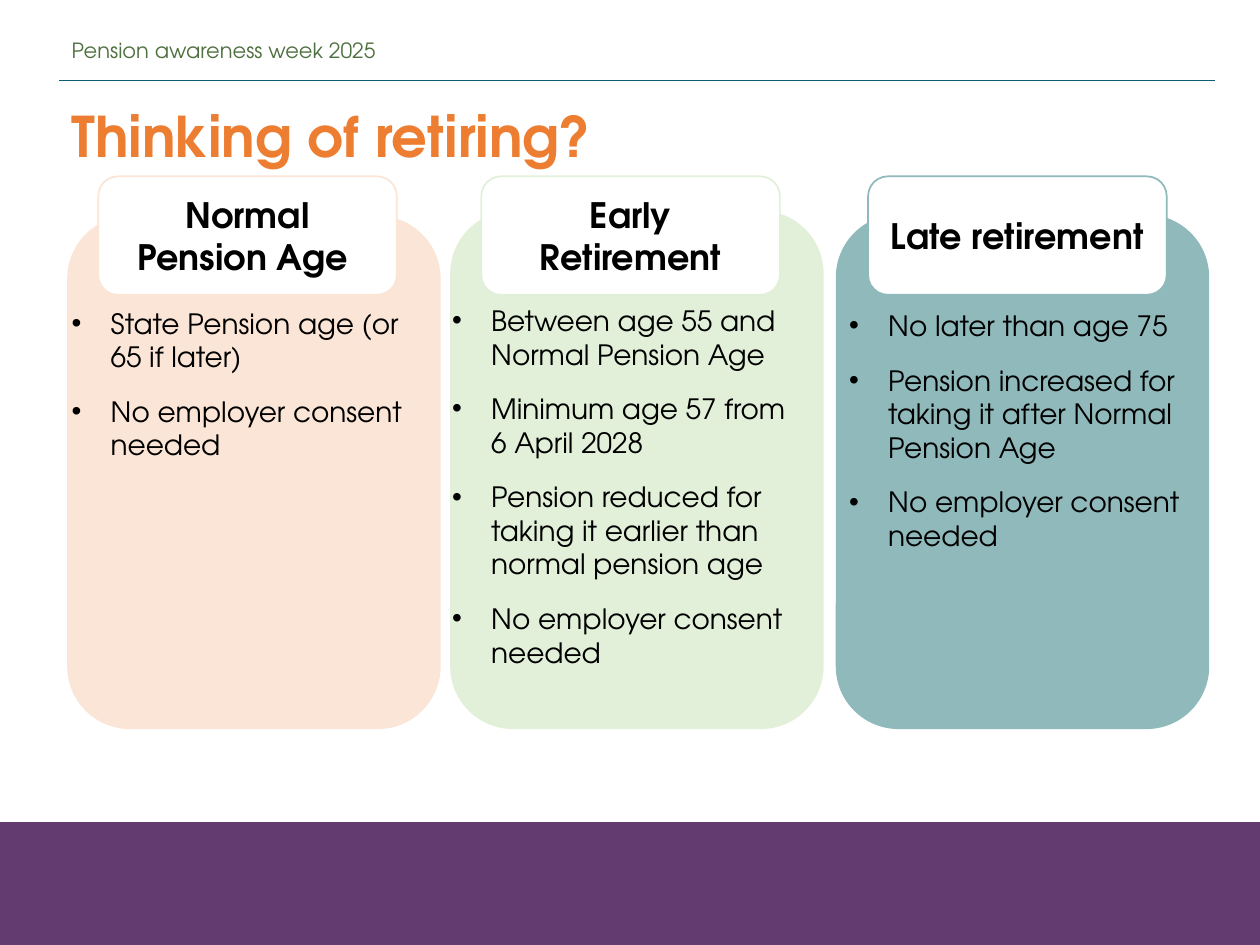
from dataclasses import dataclass

from lxml.etree import SubElement
from pptx import Presentation
from pptx.dml.color import RGBColor
from pptx.enum.shapes import MSO_CONNECTOR, MSO_SHAPE
from pptx.enum.text import MSO_ANCHOR, PP_ALIGN
from pptx.oxml.ns import qn
from pptx.util import Inches, Pt

FONT = "TeX Gyre Adventor"
BLACK = RGBColor(0x00, 0x00, 0x00)
WHITE = RGBColor(0xFF, 0xFF, 0xFF)
PURPLE = RGBColor(0x63, 0x3B, 0x71)
TEAL = RGBColor(0x0B, 0x5E, 0x74)
DARK_GREEN = RGBColor(0x4F, 0x70, 0x40)
ORANGE = RGBColor(0xED, 0x7D, 0x31)
PEACH = RGBColor(0xFB, 0xE5, 0xD6)
PALE_GREEN = RGBColor(0xE2, 0xF0, 0xD9)
SAGE = RGBColor(0x8F, 0xB9, 0xBB)

PANEL_WIDTH, PANEL_BOTTOM = 2.95, 5.78
HEADING_TOP, HEADING_WIDTH, HEADING_HEIGHT = 1.4, 2.37, 0.94
BULLET_INDENT = 0.31


@dataclass
class RetirementOption:
    heading: list[str]
    points: list[str]
    color: RGBColor
    panel_left: float
    panel_top: float
    heading_left: float
    points_left: float
    points_top: float
    points_width: float


OPTIONS = [
    RetirementOption(
        ["Normal", "Pension Age "],
        ["State Pension age (or 65 if later)", "No employer consent needed"],
        PEACH, 0.54, 1.72, 0.78, 0.47, 2.38, 3.06),
    RetirementOption(
        ["Early Retirement"],
        ["Between age 55 and Normal Pension Age",
         "Minimum age 57 from \v6 April 2028",
         "Pension reduced for taking it earlier than normal pension age",
         "No employer consent needed"],
        PALE_GREEN, 3.58, 1.68, 3.82, 3.49, 2.36, 3.03),
    RetirementOption(
        ["Late retirement"],
        ["No later than age 75",
         "Pension increased for taking it after Normal Pension Age",
         "No employer consent needed"],
        SAGE, 6.64, 1.71, 6.89, 6.64, 2.40, 2.95),
]


def add_bullet(paragraph) -> None:
    properties = paragraph._p.get_or_add_pPr()
    properties.set("marL", str(Inches(BULLET_INDENT)))
    properties.set("indent", str(-Inches(BULLET_INDENT)))
    SubElement(properties, qn("a:buFont"), typeface="Arial")
    SubElement(properties, qn("a:buChar"), char="•")


def write(shape, lines: list[str], *, size: float, color: RGBColor = BLACK,
          bold: bool = False, align=PP_ALIGN.LEFT, anchor=MSO_ANCHOR.TOP,
          bullets: bool = False, gap: float = 0, line_spacing: float = 1) -> None:
    """Fill a shape with one paragraph per line; gap is the space between them."""
    frame = shape.text_frame
    frame.word_wrap = True
    frame.vertical_anchor = anchor
    for index, line in enumerate(lines):
        paragraph = frame.add_paragraph() if index else frame.paragraphs[0]
        paragraph.text = line
        paragraph.alignment = align
        paragraph.line_spacing = line_spacing
        if index < len(lines) - 1:
            paragraph.space_after = Pt(gap)
        if bullets:
            add_bullet(paragraph)
        font = paragraph.font
        font.name, font.size, font.bold = FONT, Pt(size), bold
        font.color.rgb = color


def add_text_box(slide, left: float, top: float, width: float, height: float):
    return slide.shapes.add_textbox(
        Inches(left), Inches(top), Inches(width), Inches(height))


def add_block(slide, kind, left: float, top: float, width: float, height: float,
              fill: RGBColor, outline: RGBColor):
    block = slide.shapes.add_shape(
        kind, Inches(left), Inches(top), Inches(width), Inches(height))
    block.shadow.inherit = False
    block.fill.solid()
    block.fill.fore_color.rgb = fill
    block.line.color.rgb = outline
    block.line.width = Pt(1)
    return block


def add_header_rule(slide) -> None:
    rule = slide.shapes.add_connector(
        MSO_CONNECTOR.STRAIGHT, Inches(0.47), Inches(0.64), Inches(9.64), Inches(0.64))
    rule.line.color.rgb = TEAL
    rule.line.width = Pt(0.5)
    SubElement(rule._element.spPr, qn("a:effectLst"))


def add_option(slide, option: RetirementOption) -> None:
    add_block(slide, MSO_SHAPE.ROUNDED_RECTANGLE, option.panel_left, option.panel_top,
              PANEL_WIDTH, PANEL_BOTTOM - option.panel_top, option.color, option.color)
    heading = add_block(slide, MSO_SHAPE.ROUNDED_RECTANGLE, option.heading_left,
                        HEADING_TOP, HEADING_WIDTH, HEADING_HEIGHT, WHITE, option.color)
    write(heading, option.heading, size=20, bold=True,
          align=PP_ALIGN.CENTER, anchor=MSO_ANCHOR.MIDDLE)
    points = add_text_box(slide, option.points_left, option.points_top,
                          option.points_width, 5.39 - option.points_top)
    write(points, option.points, size=16, bullets=True, gap=12)


def main() -> None:
    presentation = Presentation()
    presentation.slide_width, presentation.slide_height = Inches(10), Inches(7.5)
    slide = presentation.slides.add_slide(presentation.slide_layouts[6])

    add_block(slide, MSO_SHAPE.RECTANGLE, 0, 6.53, 10, 0.97, PURPLE, PURPLE)
    add_header_rule(slide)
    campaign = add_text_box(slide, 0.47, 0.27, 6.51, 0.25)
    write(campaign, ["Pension awareness week 2025"], size=12, color=DARK_GREEN,
          line_spacing=0.9)
    title = add_text_box(slide, 0.47, 0.76, 9.33, 0.64)
    write(title, ["Thinking of retiring?"], size=32, color=ORANGE, bold=True)
    for option in OPTIONS:
        add_option(slide, option)

    presentation.save("out.pptx")


if __name__ == "__main__":
    main()
